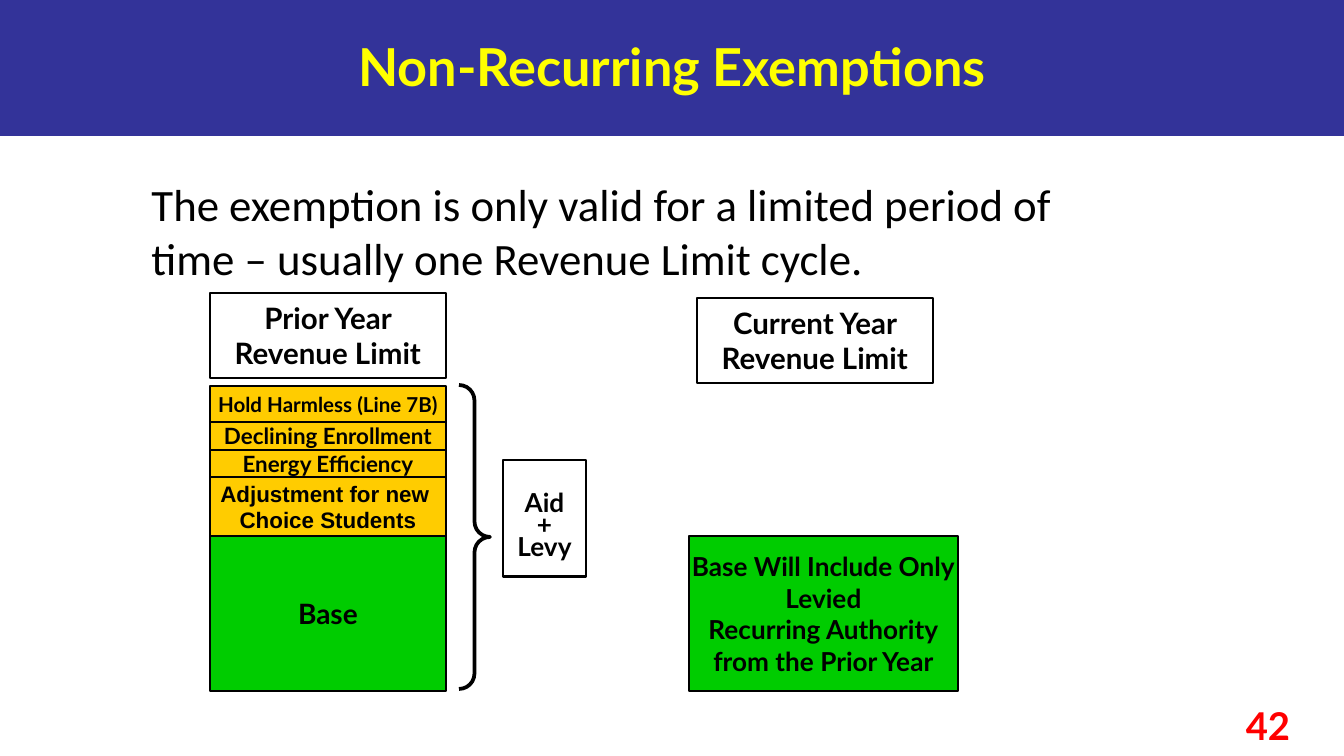
"""Build the slide on non-recurring exemptions to the revenue limit."""
import pptx
import pptx.util
import pptx.dml.color
import pptx.enum.shapes
import pptx.enum.text
from dataclasses import dataclass


@dataclass(frozen=True)
class Theme:
    band: str = "333399"
    title: str = "FFFF00"
    ink: str = "000000"
    exemption: str = "FFCC00"
    base: str = "00CC00"
    number: str = "FF0000"
    title_size: float = 28
    body_size: float = 24
    number_size: float = 20.5
    heading_size: float = 15.8
    base_size: float = 15
    note_size: float = 14
    row_size: float = 12
    small_size: float = 11


theme = Theme()
SCALE = 914400 / 134.4
SHAPE = pptx.enum.shapes.MSO_SHAPE
CENTER = pptx.enum.text.PP_ALIGN.CENTER
MIDDLE = pptx.enum.text.MSO_ANCHOR.MIDDLE
rgb = pptx.dml.color.RGBColor.from_string


def px(*lengths):
    return [round(length * SCALE) for length in lengths]


def add_box(lines, place, size, fill=None, font="Lato", weight=0.75, wrap=False):
    box = slide.shapes.add_shape(SHAPE.RECTANGLE, *px(*place))
    box.shadow.inherit = False
    if fill:
        box.fill.solid()
        box.fill.fore_color.rgb = rgb(fill)
    else:
        box.fill.background()
    box.line.color.rgb = rgb(theme.ink)
    box.line.width = pptx.util.Pt(weight)
    frame = box.text_frame
    frame.word_wrap = wrap
    frame.vertical_anchor = MIDDLE
    frame.margin_left = frame.margin_right = 0
    frame.margin_top = frame.margin_bottom = 0
    frame.text = "\n".join(lines)
    for line in frame.paragraphs:
        line.alignment = CENTER
        line.font.size = pptx.util.Pt(size)
        line.font.name = font
        line.font.bold = True
        line.font.color.rgb = rgb(theme.ink)
    return box


deck = pptx.Presentation()
deck.slide_width, deck.slide_height = px(1344, 756)
slide = deck.slides.add_slide(deck.slide_layouts[1])

band = slide.shapes.add_shape(SHAPE.RECTANGLE, *px(0, 0, 1344, 136))
band.shadow.inherit = False
band.fill.solid()
band.fill.fore_color.rgb = rgb(theme.band)
band.line.fill.background()
slide.shapes._spTree.insert(2, band._element)

title = slide.shapes.title
explanation = slide.placeholders[1]
page_number = slide.shapes.add_textbox(*px(1192, 696, 152, 60))
for part, place, text, size, font, color, bold in (
    (title, (0, 0, 1344, 132), "Non-Recurring Exemptions",
     theme.title_size, "Lato", theme.title, True),
    (explanation, (138, 170, 989, 122),
     "The exemption is only valid for a limited period of time – usually one Revenue Limit cycle.",
     theme.body_size, "Calibri", theme.ink, False),
    (page_number, (1192, 696, 152, 60), "42",
     theme.number_size, "Lato", theme.number, True),
):
    part.left, part.top, part.width, part.height = px(*place)
    frame = part.text_frame
    frame.word_wrap = True
    frame.auto_size = pptx.enum.text.MSO_AUTO_SIZE.NONE
    frame.text = text
    paragraph = frame.paragraphs[0]
    paragraph.space_before = pptx.util.Pt(0)
    if part is explanation:
        properties = paragraph._p.get_or_add_pPr()
        properties.set("marL", "0")
        properties.set("indent", "0")
        properties.append(pptx.oxml.parse_xml(
            '<a:buNone xmlns:a="http://schemas.openxmlformats.org/drawingml/2006/main"/>'))
    else:
        paragraph.alignment = CENTER
    paragraph.font.size = pptx.util.Pt(size)
    paragraph.font.name = font
    paragraph.font.bold = bold
    paragraph.font.color.rgb = rgb(color)
title.text_frame.vertical_anchor = MIDDLE

for year, left, top in (("Prior", 210, 293), ("Current", 697, 298)):
    add_box([f"{year} Year Revenue Limit"], (left, top, 236, 85),
            theme.heading_size, wrap=True)

row_top = 386
for lines, height, size, fill, font in (
    (["Hold Harmless (Line 7B)"], 36, theme.small_size, theme.exemption, "Lato"),
    (["Declining Enrollment"], 28, theme.row_size, theme.exemption, "Lato"),
    (["Energy Efficiency"], 27, theme.row_size, theme.exemption, "Lato"),
    (["Adjustment for new ", "Choice Students"], 59, theme.row_size, theme.exemption, "Arial"),
    (["Base"], 155, theme.base_size, theme.base, "Lato"),
):
    add_box(lines, (210, row_top, 236, height), size, fill, font)
    row_top += height

aid_and_levy = add_box(["Aid", "+", "Levy"], (503, 460, 83, 117),
                       theme.note_size, weight=1.5, wrap=True)
aid_and_levy.text_frame.margin_top = px(20)[0]
for line in aid_and_levy.text_frame.paragraphs:
    line.line_spacing = pptx.util.Pt(12)

brace = slide.shapes.add_shape(SHAPE.RIGHT_BRACE, *px(459, 385, 31, 304))
brace.shadow.inherit = False
brace.adjustments[0] = 0.5
brace.adjustments[1] = 0.5
brace.fill.background()
brace.line.color.rgb = rgb(theme.ink)
brace.line.width = pptx.util.Pt(2)

add_box(["Base Will Include Only", "Levied", "Recurring Authority", "from the Prior Year"],
        (689, 536, 269, 155), theme.note_size, theme.base)

deck.save("out.pptx")
